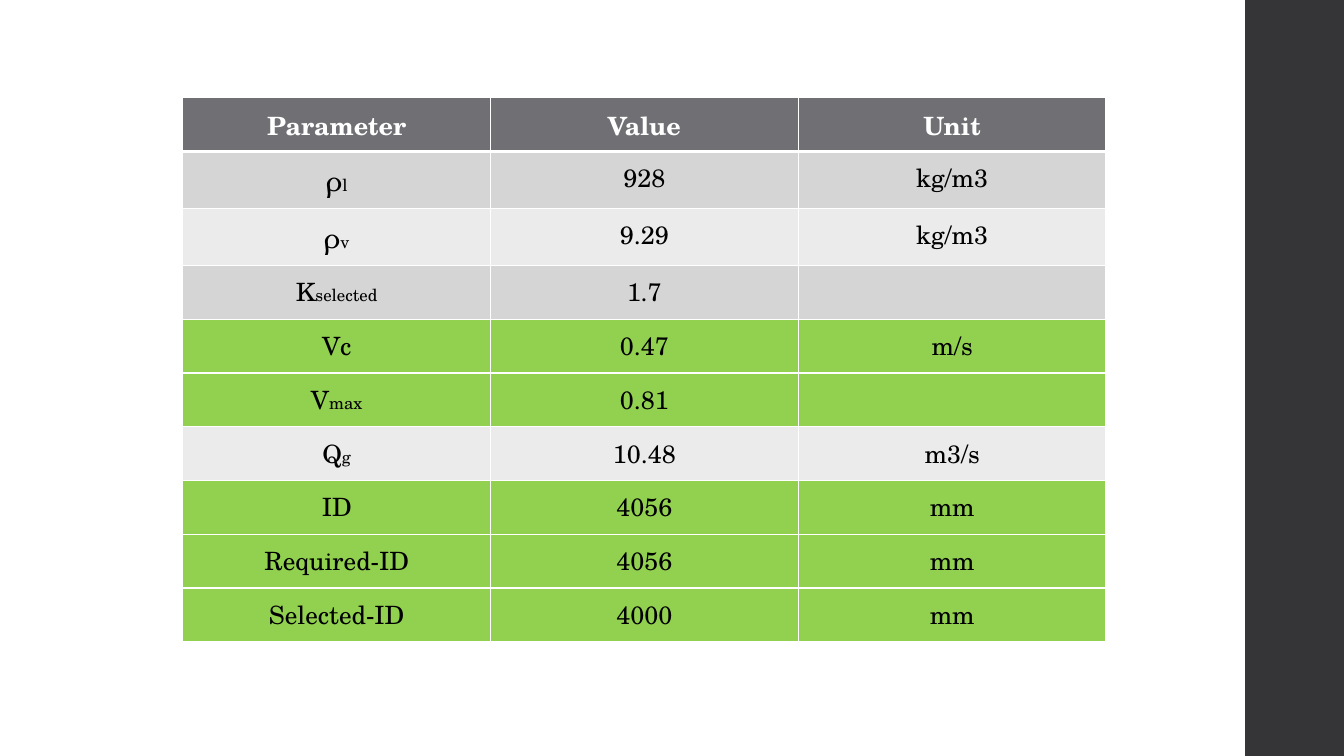
import dataclasses
import typing

import lxml.etree
import pptx
import pptx.dml.color
import pptx.enum.shapes
import pptx.enum.text
import pptx.oxml.ns
import pptx.util

WHITE = pptx.dml.color.RGBColor(0xFF, 0xFF, 0xFF)
BLACK = pptx.dml.color.RGBColor(0x00, 0x00, 0x00)
CHARCOAL = pptx.dml.color.RGBColor(0x35, 0x35, 0x37)
HEADER_GRAY = pptx.dml.color.RGBColor(0x6F, 0x6F, 0x74)
HIGHLIGHT_GREEN = pptx.dml.color.RGBColor(0x92, 0xD0, 0x50)
BANDS = (
    pptx.dml.color.RGBColor(0xD5, 0xD5, 0xD6),
    pptx.dml.color.RGBColor(0xEB, 0xEB, 0xEB),
)

FONT = "TeX Gyre Schola"
TEXT_SIZE = 18
SUBSCRIPT_SIZE = 12
SLIDE_WIDTH = pptx.util.Inches(13.33)
SLIDE_HEIGHT = pptx.util.Inches(7.5)
HEADINGS = ("Parameter", "Value", "Unit")


@dataclasses.dataclass(frozen=True)
class ParameterRow:
    symbol: str
    subscript: str
    value: str
    unit: str
    highlighted: bool = False
    symbol_size: int = TEXT_SIZE


PARAMETERS = (
    ParameterRow("ρ", "l", "928", "kg/m3", symbol_size=20),
    ParameterRow("ρ", "v", "9.29", "kg/m3", symbol_size=20),
    ParameterRow("K", "selected", "1.7", ""),
    ParameterRow("Vc", "", "0.47", "m/s", highlighted=True),
    ParameterRow("V", "max", "0.81", "", highlighted=True),
    ParameterRow("Q", "g", "10.48", "m3/s"),
    ParameterRow("ID", "", "4056", "mm", highlighted=True),
    ParameterRow("Required-ID", "", "4056", "mm", highlighted=True),
    ParameterRow("Selected-ID", "", "4000", "mm", highlighted=True),
)


def across(percent: float) -> int:
    return round(SLIDE_WIDTH * percent / 100)


def down(percent: float) -> int:
    return round(SLIDE_HEIGHT * percent / 100)


def set_borders(cell: typing.Any, top: float, bottom: float) -> None:
    properties = cell._tc.get_or_add_tcPr()
    widths = {"a:lnL": 1, "a:lnR": 1, "a:lnT": top, "a:lnB": bottom}
    for position, (tag, width) in enumerate(widths.items()):
        line = lxml.etree.Element(pptx.oxml.ns.qn(tag), w=str(pptx.util.Pt(width)))
        fill = lxml.etree.SubElement(line, pptx.oxml.ns.qn("a:solidFill"))
        lxml.etree.SubElement(fill, pptx.oxml.ns.qn("a:srgbClr"), val=str(WHITE))
        properties.insert(position, line)


def write_cell(
    cell: typing.Any,
    pieces: typing.Sequence[tuple[str, int]],
    fill: pptx.dml.color.RGBColor,
    color: pptx.dml.color.RGBColor = BLACK,
    bold: bool = False,
) -> None:
    cell.fill.solid()
    cell.fill.fore_color.rgb = fill
    para = cell.text_frame.paragraphs[0]
    para.alignment = pptx.enum.text.PP_ALIGN.CENTER
    para.line_spacing = 1.07
    para.space_after = pptx.util.Pt(8)
    para.font.size = pptx.util.Pt(TEXT_SIZE)
    for text, size in pieces:
        if text:
            span = para.add_run()
            span.text = text
            span.font.name = FONT
            span.font.size = pptx.util.Pt(size)
            span.font.bold = bold
            span.font.color.rgb = color


def add_sidebar(page: typing.Any) -> None:
    left = across(92.65)
    sidebar = page.shapes.add_shape(
        pptx.enum.shapes.MSO_SHAPE.RECTANGLE, left, 0, SLIDE_WIDTH - left, SLIDE_HEIGHT
    )
    sidebar.shadow.inherit = False
    sidebar.fill.solid()
    sidebar.fill.fore_color.rgb = CHARCOAL
    sidebar.line.fill.background()


def add_parameter_table(page: typing.Any) -> None:
    row_height, tall_row_height = down(7.11), down(7.55)
    heights = [row_height] + [
        tall_row_height if row.symbol_size > TEXT_SIZE else row_height
        for row in PARAMETERS
    ]
    table = page.shapes.add_table(
        len(heights), len(HEADINGS), across(13.6), down(12.93), across(68.7), sum(heights)
    ).table
    table.horz_banding = False
    for table_row, height in zip(table.rows, heights):
        table_row.height = height

    for cell, heading in zip(table.rows[0].cells, HEADINGS):
        write_cell(cell, [(heading, TEXT_SIZE)], HEADER_GRAY, WHITE, bold=True)
        set_borders(cell, top=1, bottom=3)

    for index, row in enumerate(PARAMETERS):
        fill = HIGHLIGHT_GREEN if row.highlighted else BANDS[index % 2]
        contents = (
            [(row.symbol, row.symbol_size), (row.subscript, SUBSCRIPT_SIZE)],
            [(row.value, TEXT_SIZE)],
            [(row.unit, TEXT_SIZE)],
        )
        for cell, pieces in zip(table.rows[index + 1].cells, contents):
            write_cell(cell, pieces, fill)
            set_borders(cell, top=3 if index == 0 else 1, bottom=1)


def main() -> None:
    deck = pptx.Presentation()
    deck.slide_width = SLIDE_WIDTH
    deck.slide_height = SLIDE_HEIGHT
    page = deck.slides.add_slide(deck.slide_layouts[6])
    add_sidebar(page)
    add_parameter_table(page)
    deck.save("out.pptx")


if __name__ == "__main__":
    main()
